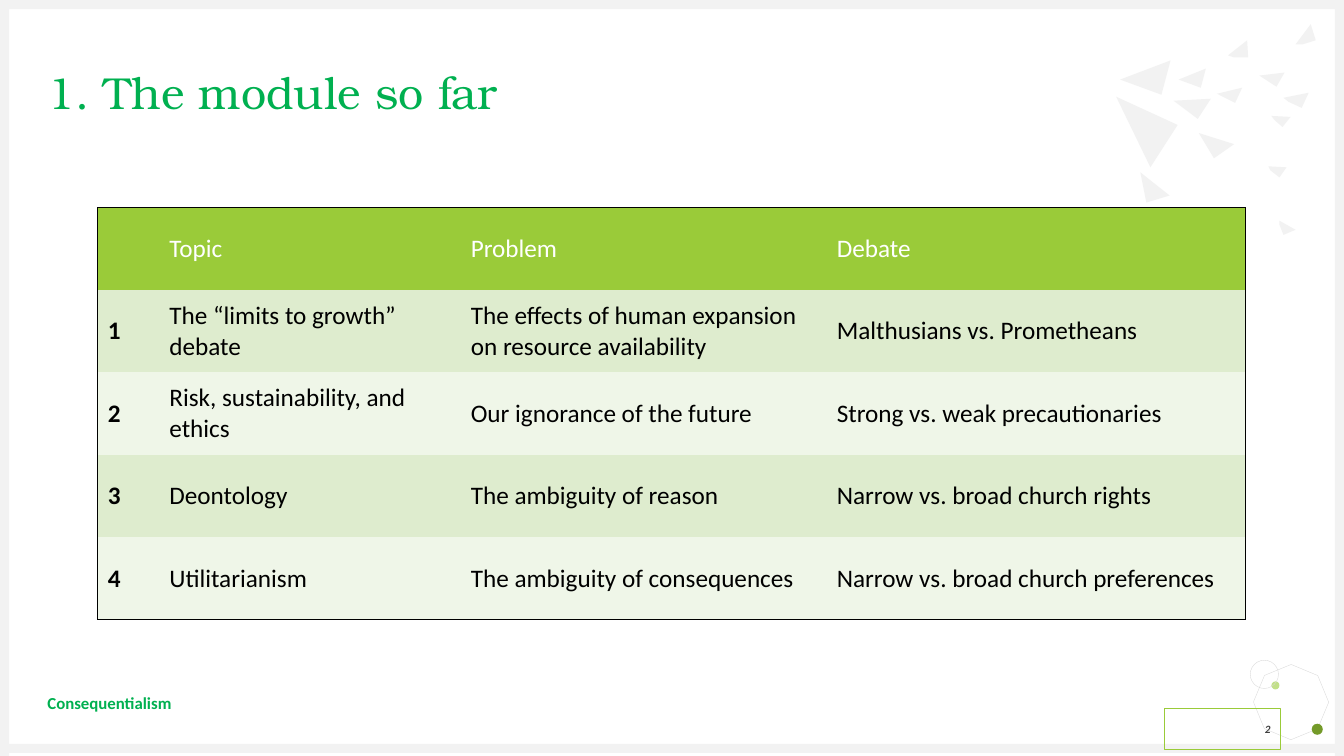
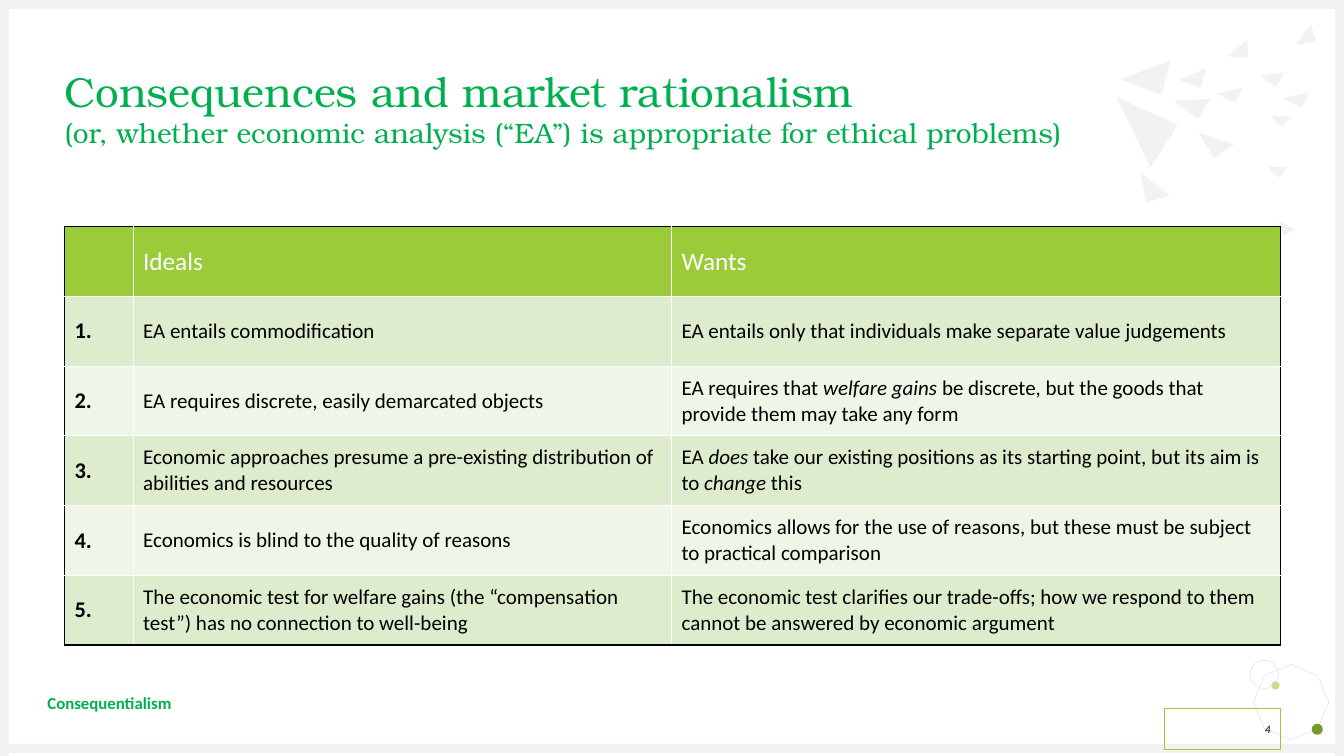
from dataclasses import dataclass

from lxml import etree
from pptx import Presentation
from pptx.dml.color import RGBColor
from pptx.enum.shapes import MSO_SHAPE
from pptx.enum.text import MSO_ANCHOR, MSO_AUTO_SIZE, PP_ALIGN
from pptx.oxml.ns import qn
from pptx.util import Inches, Pt

RECT, OVAL, OCTAGON = MSO_SHAPE.RECTANGLE, MSO_SHAPE.OVAL, MSO_SHAPE.OCTAGON
MIDDLE, NO_FIT = MSO_ANCHOR.MIDDLE, MSO_AUTO_SIZE.NONE
LEFT, RIGHT = PP_ALIGN.LEFT, PP_ALIGN.RIGHT
TITLE_ONLY = 5
NO_GRID_STYLE = "{2D5ABB26-0587-4C30-8999-92F81FD0307C}"


@dataclass(frozen=True)
class Theme:
    """Colours, fonts and type sizes shared by the slides."""
    width: float = 13.33
    height: float = 7.5
    band: float = 0.09
    heading_font: str = "TeX Gyre Bonum"
    body_font: str = "Calibri"
    green: str = "00B050"
    accent: str = "9ACB39"
    accent_light: str = "C2E088"
    accent_dark: str = "749A29"
    row_odd: str = "DEECCE"
    row_even: str = "EFF6E8"
    decor: str = "F2F2F2"
    outline: str = "D9D9D9"
    number: str = "404040"
    black: str = "000000"
    white: str = "FFFFFF"
    header_size: int = 18
    footer_size: int = 12
    number_size: int = 8
    hairline: float = 0.25


THEME = Theme()

SHARDS = [
    [(11.61, 0.6), (11.52, 0.94), (11.11, 0.79)],
    [(12.01, 0.98), (11.88, 1.18), (11.64, 1)],
    [(11.96, 0.68), (11.91, 0.87), (11.69, 0.79)],
    [(12.32, 0.87), (12.25, 1.02), (12.07, 0.93)],
    [(12.37, 0.4), (12.38, 0.57), (12.24, 0.57), (12.18, 0.55)],
    [(12.8, 1.16), (12.72, 1.26), (12.64, 1.19), (12.61, 1.15)],
    [(13, 0.24), (13.05, 0.4), (12.92, 0.44), (12.85, 0.44)],
    [(12.74, 0.72), (12.66, 0.86), (12.49, 0.75)],
    [(12.98, 0.92), (12.91, 1.07), (12.78, 1.01), (12.73, 0.97)],
    [(11.68, 1.24), (11.41, 1.66), (11.07, 0.96)],
    [(12.24, 1.43), (12.04, 1.57), (11.89, 1.32)],
    [(12.76, 1.66), (12.69, 1.76), (12.6, 1.69), (12.58, 1.65)],
    [(11.6, 1.94), (11.37, 2.01), (11.31, 1.71)],
    [(12.85, 2.28), (12.73, 2.33), (12.69, 2.23), (12.69, 2.19)],
]

MODULE_ROWS = [
    ["", "Topic", "Problem", "Debate"],
    ["1", "The “limits to growth” debate",
     "The effects of human expansion on resource availability",
     "Malthusians vs. Prometheans"],
    ["2", "Risk, sustainability, and ethics", "Our ignorance of the future",
     "Strong vs. weak precautionaries"],
    ["3", "Deontology", "The ambiguity of reason", "Narrow vs. broad church rights"],
    ["4", "Utilitarianism", "The ambiguity of consequences",
     "Narrow vs. broad church preferences"],
]

MARKET_ROWS = [
    ["", "Ideals", "Wants"],
    ["1.", "EA entails commodification",
     "EA entails only that individuals make separate value judgements"],
    ["2.", "EA requires discrete, easily demarcated objects",
     "EA requires that *welfare gains *be discrete, but the goods that provide "
     "them may take any form"],
    ["3.", "Economic approaches presume a pre-existing distribution of abilities "
     "and resources",
     "EA *does *take our existing positions as its starting point, but its aim is "
     "to *change *this"],
    ["4.", "Economics is blind to the quality of reasons",
     "Economics allows for the use of reasons, but these must be subject to "
     "practical comparison"],
    ["5.", "The economic test for welfare gains (the “compensation test”) has no "
     "connection to well-being",
     "The economic test clarifies our trade-offs; how we respond to them cannot be "
     "answered by economic argument"],
]


def rgb(color):
    """Turn a hex string into a colour."""
    return RGBColor.from_string(color)


def style_run(r, size, color, font=THEME.body_font, bold=False, italic=False):
    """Set the font of a run."""
    f = r.font
    f.name, f.size, f.bold, f.italic = font, Pt(size), bold, italic
    f.color.rgb = rgb(color)


def paint(sp, fill=None, line=None):
    """Give a shape a flat fill and line, or none."""
    sp.shadow.inherit = False
    if fill:
        sp.fill.solid()
        sp.fill.fore_color.rgb = rgb(fill)
    else:
        sp.fill.background()
    if line:
        sp.line.color.rgb = rgb(line)
        sp.line.width = Pt(THEME.hairline)
    else:
        sp.line.fill.background()
    return sp


def add_shape(slide, kind, box, fill=None, line=None):
    """Add a preset shape in a box of inches."""
    sp = slide.shapes.add_shape(kind, *map(Inches, box))
    return paint(sp, fill, line)


def add_bands(slide):
    """Frame the slide with four narrow bands."""
    w, h, b = THEME.width, THEME.height, THEME.band
    boxes = [(0, 7.38, w, b), (0, 0, w, b), (0, 0, b, h), (w - b, 0, b, h)]
    return [add_shape(slide, RECT, box, THEME.decor) for box in boxes]


def add_shards(slide):
    """Scatter the triangles of the top right corner."""
    shards = []
    for start, *rest in SHARDS:
        fb = slide.shapes.build_freeform(
            Inches(start[0]), Inches(start[1]), scale=1.0)
        fb.add_line_segments([(Inches(x), Inches(y)) for x, y in rest], close=True)
        shards.append(paint(fb.convert_to_shape(), THEME.decor))
    return shards


def add_orbits(slide):
    """Draw the rings and dots of the bottom right corner."""
    octagon = add_shape(slide, OCTAGON, (12.46, 6.62, 0.69, 0.69), line=THEME.outline)
    octagon.rotation = 22.7
    return [
        octagon,
        add_shape(slide, OVAL, (12.61, 6.76, 0.08, 0.08), THEME.accent_light),
        add_shape(slide, OVAL, (13.01, 7.18, 0.11, 0.11), THEME.accent_dark),
        add_shape(slide, OVAL, (12.4, 6.55, 0.28, 0.28), line=THEME.outline),
    ]


def decorate_layout(slide):
    """Draw the shared decoration and hand it to the layout of the slide."""
    tree = slide.slide_layout.shapes.element
    decor = add_orbits(slide) + add_bands(slide) + add_shards(slide)
    for number, sp in enumerate(decor, 100):
        sp.element.nvSpPr.cNvPr.id = number
        tree.append(sp.element)


def set_frame(tf, inset=None):
    """Wrap a text frame, centre it vertically and set its insets."""
    tf.word_wrap, tf.auto_size, tf.vertical_anchor = True, NO_FIT, MIDDLE
    if inset is not None:
        tf.margin_left = tf.margin_right = Inches(inset)
        tf.margin_top = tf.margin_bottom = Inches(inset)


def set_title(slide, box, lines, spacing=1.0):
    """Place the title and style each of its (text, size) lines."""
    sp = slide.shapes.title
    sp.left, sp.top, sp.width, sp.height = map(Inches, box)
    tf = sp.text_frame
    set_frame(tf, 0)
    tf.text = "\v".join(text for text, _ in lines)
    p = tf.paragraphs[0]
    p.alignment, p.line_spacing = LEFT, spacing
    for r, (_, size) in zip(p.runs, lines):
        style_run(r, size, THEME.green, THEME.heading_font)


def add_footer(slide, number):
    """Add the course name and the boxed slide number."""
    tb = slide.shapes.add_textbox(*map(Inches, (0.47, 6.77, 9.61, 0.4)))
    sp = add_shape(slide, RECT, (11.55, 7.03, 1.15, 0.4), line=THEME.accent)
    set_frame(tb.text_frame, 0)
    set_frame(sp.text_frame)
    tb.text_frame.text, sp.text_frame.text = "Consequentialism", str(number)
    style_run(tb.text_frame.paragraphs[0].runs[0], THEME.footer_size,
              THEME.green, bold=True)
    p = sp.text_frame.paragraphs[0]
    p.alignment = RIGHT
    style_run(p.runs[0], THEME.number_size, THEME.number, bold=True, italic=True)


def set_borders(cell, edges):
    """Draw a one-point line on each cell edge that has a colour."""
    tcPr = cell._tc.get_or_add_tcPr()
    for side in "LRTB":
        if edges[side]:
            ln = etree.SubElement(tcPr, qn(f"a:ln{side}"), w=str(Pt(1)))
            fill = etree.SubElement(ln, qn("a:solidFill"))
            etree.SubElement(fill, qn("a:srgbClr"), val=edges[side])


def fill_cell(cell, text, size, color, bold):
    """Write cell text, with the parts between asterisks in italics."""
    cell.vertical_anchor = MIDDLE
    p = cell.text_frame.paragraphs[0]
    for i, part in enumerate(text.split("*")):
        if part:
            r = p.add_run()
            r.text = part
            style_run(r, size, color, bold=bold, italic=i % 2 == 1)


def add_grid(slide, box, widths, rows, key_size, body_size, inner=None):
    """Add a banded table with a black frame and optional inner lines."""
    last_row, last_col = len(rows) - 1, len(widths) - 1
    gf = slide.shapes.add_table(len(rows), len(widths), *map(Inches, box))
    tbl = gf.table
    tbl.first_row = tbl.horz_banding = False
    tbl._tbl.tblPr.find(qn("a:tableStyleId")).text = NO_GRID_STYLE
    for col, width in zip(tbl.columns, widths):
        col.width = Inches(width)
    for i, texts in enumerate(rows):
        tbl.rows[i].height = Inches(box[3] / len(rows))
        band = THEME.row_odd if i % 2 else THEME.row_even
        for j, text in enumerate(texts):
            cell = tbl.cell(i, j)
            outer = {"L": j == 0, "R": j == last_col, "T": i == 0, "B": i == last_row}
            set_borders(cell, {side: THEME.black if on else inner
                               for side, on in outer.items()})
            cell.fill.solid()
            cell.fill.fore_color.rgb = rgb(band if i else THEME.accent)
            if i == 0:
                fill_cell(cell, text, THEME.header_size, THEME.white, False)
            else:
                fill_cell(cell, text, body_size if j else key_size,
                          THEME.black, j == 0)


def build_module_slide(slide):
    """Build the overview of the module."""
    set_title(slide, (0.47, 0.71, 12.4, 0.47), [("1. The module so far", 32)], 0.9)
    add_grid(slide, (0.97, 2.06, 11.38, 4.09), [0.61, 2.99, 3.63, 4.15],
             MODULE_ROWS, key_size=18, body_size=18)
    add_footer(slide, 2)


def build_market_slide(slide):
    """Build the comparison of ideals and wants."""
    set_title(slide, (0.64, 0.51, 12.06, 1.11), [
        ("Consequences and market rationalism", 30),
        ("(or, whether economic analysis (“EA”) is appropriate for ethical problems)",
         20)])
    add_grid(slide, (0.64, 2.25, 12.06, 4.15), [0.68, 5.34, 6.04],
             MARKET_ROWS, key_size=16, body_size=15, inner=THEME.white)
    add_footer(slide, 4)


def main():
    """Build and save the presentation."""
    prs = Presentation()
    prs.slide_width, prs.slide_height = Inches(THEME.width), Inches(THEME.height)
    layout = prs.slide_layouts[TITLE_ONLY]
    slides = [prs.slides.add_slide(layout) for _ in range(2)]
    decorate_layout(slides[0])
    build_module_slide(slides[0])
    build_market_slide(slides[1])
    prs.save("out.pptx")


if __name__ == "__main__":
    main()
